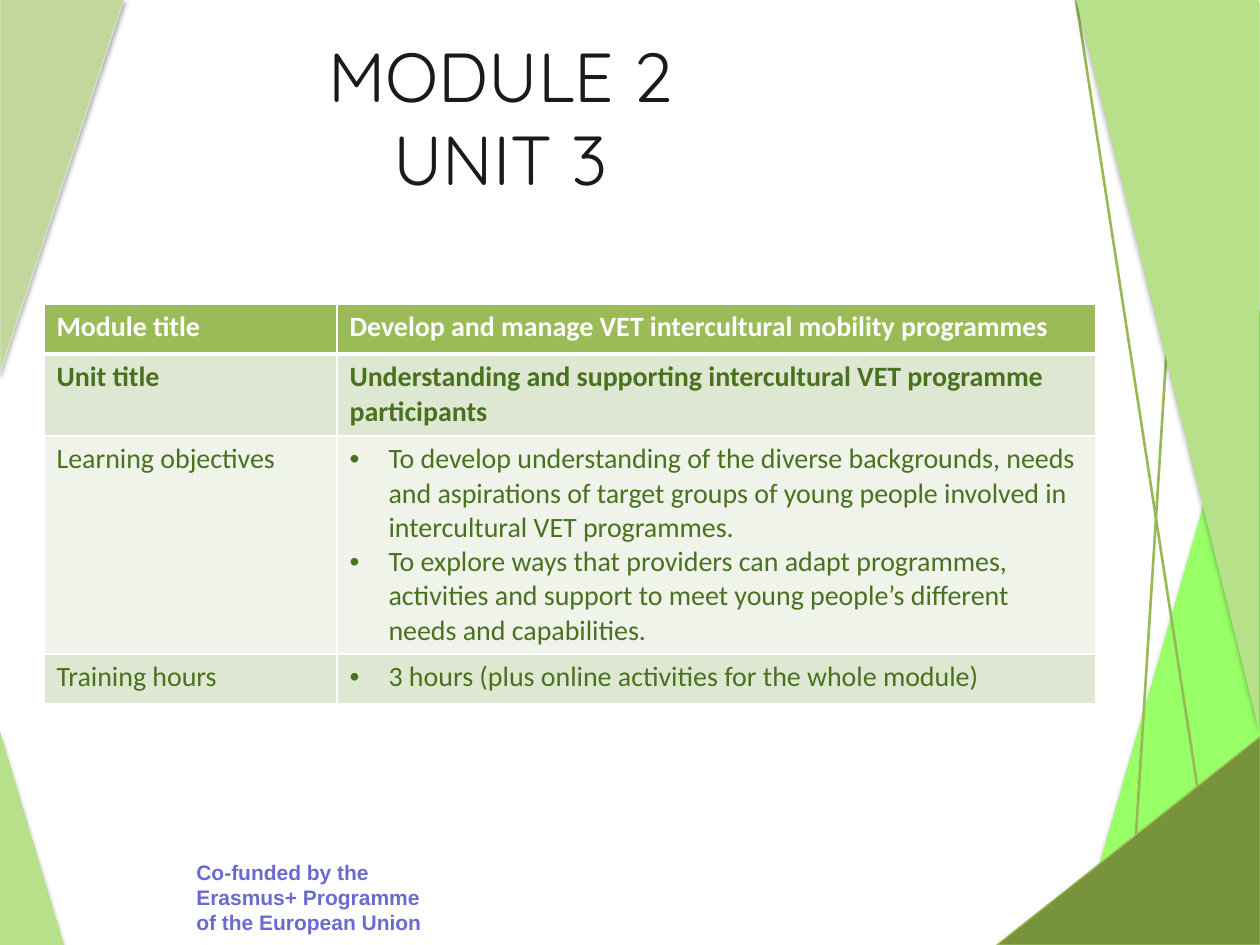
"""Build the title slide of a training unit with its summary table."""
from dataclasses import dataclass

from lxml.etree import SubElement
from pptx import Presentation
from pptx.dml.color import RGBColor
from pptx.enum.shapes import MSO_CONNECTOR, MSO_SHAPE
from pptx.enum.text import MSO_ANCHOR, PP_ALIGN
from pptx.oxml.ns import qn
from pptx.slide import Slide
from pptx.util import Pt

HUES = {
    "white": "FFFFFF", "black": "000000", "ink": "1A1A1A", "violet": "6B6BCF",
    "neon": "99FF66", "mint": "B7E08B", "sage": "C3D69B", "pale": "D7E4BD",
    "olive": "77933C", "line": "98B955", "head": "9BBB59", "text": "49711E",
    "band": "DEE7D1", "light": "EFF3EA",
}
ROWS = [
    ("Module title", ["Develop and manage VET intercultural mobility programmes"],
     50, "head", "white", True, False),
    ("Unit title", ["Understanding and supporting intercultural VET programme participants"],
     82, "band", "text", True, False),
    ("Learning objectives", [
        "To develop understanding of the diverse backgrounds, needs and aspirations "
        "of target groups of young people involved in intercultural VET programmes.",
        "To explore ways that providers can adapt programmes, activities and support "
        "to meet young people’s different needs and capabilities."],
     218, "light", "text", False, True),
    ("Training hours", ["3 hours (plus online activities for the whole module)"],
     50, "band", "text", False, True),
]


def px(size):
    """Turn px into EMU."""
    return round(size * 914400 / 126)


def rgb(name):
    """Look up a named colour."""
    return RGBColor.from_string(HUES[name])


def solid(node, name):
    """Add a solid fill to an XML node."""
    fill = SubElement(node, qn("a:solidFill"))
    return SubElement(fill, qn("a:srgbClr"), val=HUES[name])


@dataclass
class Deck:
    """Style and current slide."""
    slide: Slide
    face: str = "Calibri"
    size: float = 16

    def font(self, para, hue, bold=False, face=None, size=None):
        """Set the font of a paragraph."""
        font = para.font
        font.name, font.size = face or self.face, Pt(size or self.size)
        font.bold, font.color.rgb = bold, rgb(hue)

    def wedge(self, box, hue, flips="", edge=None, alpha=35, dist=1.8):
        """Add a right triangle with a soft shadow."""
        shape = self.slide.shapes.add_shape(MSO_SHAPE.RIGHT_TRIANGLE, *map(px, box))
        shape.shadow.inherit = False
        shape.fill.solid()
        shape.fill.fore_color.rgb = rgb(hue)
        if edge:
            shape.line.color.rgb = rgb(edge)
            shape.line.width = Pt(0.75)
        else:
            shape.line.fill.background()
        props = shape._element.spPr
        for flip in flips:
            props.find(qn("a:xfrm")).set("flip" + flip, "1")
        glow = SubElement(props.find(qn("a:effectLst")), qn("a:outerShdw"),
                          blurRad=str(Pt(3.1)), dist=str(Pt(dist)),
                          dir="5400000", rotWithShape="0")
        tint = SubElement(glow, qn("a:srgbClr"), val=HUES["black"])
        SubElement(tint, qn("a:alpha"), val=str(alpha * 1000))

    def line(self, *ends):
        """Add a thin straight line."""
        line = self.slide.shapes.add_connector(MSO_CONNECTOR.STRAIGHT, *map(px, ends))
        line.line.color.rgb = rgb("line")
        line.line.width = Pt(1.5)
        SubElement(line._element.spPr, qn("a:effectLst"))

    def label(self, box, text, hue, face, size, bold=False,
              align=PP_ALIGN.LEFT, anchor=MSO_ANCHOR.TOP):
        """Add a text box."""
        frame = self.slide.shapes.add_textbox(*map(px, box)).text_frame
        frame.word_wrap, frame.vertical_anchor = True, anchor
        para = frame.paragraphs[0]
        para.text, para.alignment = text, align
        self.font(para, hue, bold, face, size)

    def cell(self, cell, texts, fill, hue, bold, dots, base):
        """Fill one table cell and draw its borders."""
        props = cell._tc.get_or_add_tcPr()
        for side in "LRTB":
            width = base if side == "B" else 1
            solid(SubElement(props, qn("a:ln" + side), w=str(Pt(width))), "white")
        cell.fill.solid()
        cell.fill.fore_color.rgb = rgb(fill)
        frame = cell.text_frame
        for spot, text in enumerate(texts):
            para = frame.add_paragraph() if spot else frame.paragraphs[0]
            para.text = text
            if dots:
                bullet = para._p.get_or_add_pPr()
                bullet.set("marL", str(px(39)))
                bullet.set("indent", str(-px(39)))
                SubElement(bullet, qn("a:buFont"), typeface="Arial")
                SubElement(bullet, qn("a:buChar"), char="•")
            self.font(para, hue, bold)

    def table(self, box, widths, rows):
        """Add the summary table."""
        frame = self.slide.shapes.add_table(len(rows), len(widths), *map(px, box))
        table = frame.table
        table.horz_banding = False
        for col, width in zip(table.columns, widths):
            col.width = px(width)
        for at, (name, texts, height, fill, hue, bold, dots) in enumerate(rows):
            table.rows[at].height = px(height)
            base = 1 if at else 3
            self.cell(table.cell(at, 0), [name], fill, hue, bold, False, base)
            self.cell(table.cell(at, 1), texts, fill, hue, bold, dots, base)


def main():
    """Build and save the slide."""
    show = Presentation()
    show.slide_width, show.slide_height = px(1260), px(945)
    deck = Deck(show.slides.add_slide(show.slide_layouts[6]))
    deck.wedge((1076, 304, 186, 641), "neon", "H", alpha=38, dist=1.6)
    deck.label((184, 853, 252, 89),
               "Co-funded by the Erasmus+ Programme of the European Union",
               "violet", "Arial", 12, bold=True)
    deck.wedge((0, 731, 64, 214), "mint")
    deck.wedge((0, -1, 124, 374), "sage", "V", edge="pale")
    deck.line(1129, 945, 1172, 265)
    deck.line(1216, 908, 1076, -1)
    deck.wedge((1076, -1, 183, 731), "mint", "HV")
    deck.wedge((997, 737, 263, 208), "olive", "H", edge="line")
    deck.label((93, 38, 815, 157), "MODULE 2\nUNIT 3", "ink", "Quicksand", 39.6,
               align=PP_ALIGN.CENTER, anchor=MSO_ANCHOR.MIDDLE)
    deck.table((44, 304, 1052, 400), (293, 759), ROWS)
    show.save("out.pptx")


if __name__ == "__main__":
    main()
